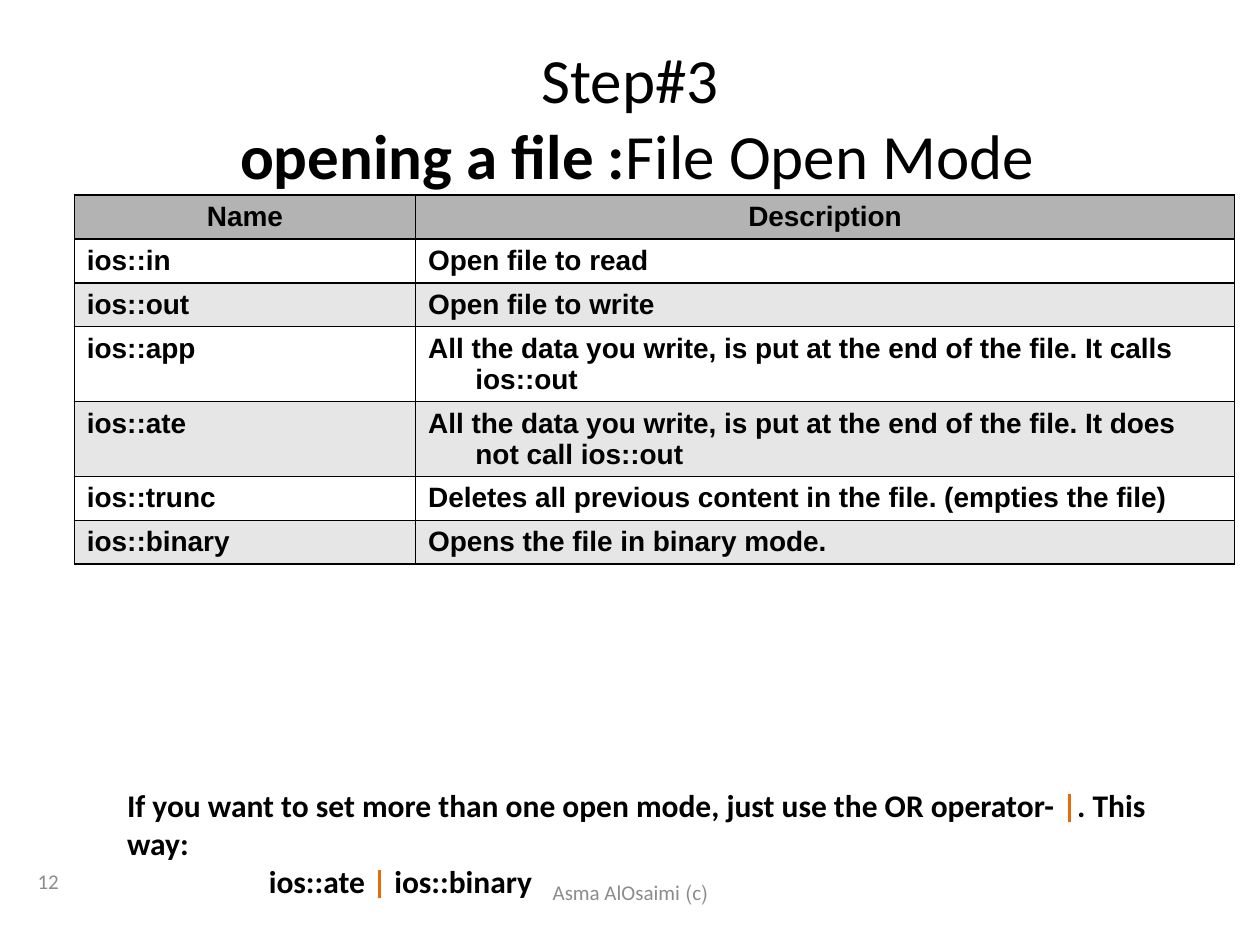
"""Builds the slide on C++ file open modes: a table of modes and a note on combining them."""
from lxml.etree import SubElement
from pptx import Presentation
from pptx.dml.color import RGBColor
from pptx.enum.text import MSO_ANCHOR as Anchor, PP_ALIGN as Align
from pptx.oxml.ns import qn
from pptx.util import Pt

BLACK = RGBColor(0x00, 0x00, 0x00)
ORANGE = RGBColor(0xE4, 0x6C, 0x0A)
MUTED = RGBColor(0x8C, 0x8C, 0x8C)
HEADER_GRAY = RGBColor(0xB3, 0xB3, 0xB3)
BAND_GRAY = RGBColor(0xE6, 0xE6, 0xE6)


def add_run(paragraph, text, size, color=BLACK, bold=False, face="Calibri"):
    run = paragraph.add_run()
    run.text = text
    run.font.name = face
    run.font.size = Pt(size)
    run.font.bold = bold
    run.font.color.rgb = color


def add_text_frame(slide, left, top, width, height, anchor):
    frame = slide.shapes.add_textbox(Pt(left), Pt(top), Pt(width), Pt(height)).text_frame
    frame.word_wrap = True
    frame.vertical_anchor = anchor
    return frame


prs = Presentation()
prs.slide_width, prs.slide_height = Pt(720), Pt(540)
slide = prs.slides.add_slide(prs.slide_layouts[5])

title = slide.shapes.title
title.left, title.top, title.width, title.height = Pt(36), Pt(21.6), Pt(648), Pt(90)
title.text_frame.vertical_anchor = Anchor.MIDDLE
heading = title.text_frame.paragraphs[0]
heading.alignment = Align.CENTER
add_run(heading, "Step#3", 36)
heading.add_line_break()
add_run(heading, " ", 36)
add_run(heading, "opening a file :", 36, bold=True)
add_run(heading, "File Open Mode", 36)

ONE_LINE, TWO_LINES = 25.1, 42.6
modes = [
    ("Name", "Description", ONE_LINE),
    ("ios::in", "Open file to read", ONE_LINE),
    ("ios::out", "Open file to write", ONE_LINE),
    ("ios::app", "All the data you write, is put at the end of the file. It calls ios::out", TWO_LINES),
    ("ios::ate", "All the data you write, is put at the end of the file. It does not call ios::out", TWO_LINES),
    ("ios::trunc", "Deletes all previous content in the file. (empties the file)", ONE_LINE),
    ("ios::binary", "Opens the file in binary mode.", ONE_LINE),
]
table_height = sum(height for _, _, height in modes)
mode_table = slide.shapes.add_table(
    len(modes), 2, Pt(42.5), Pt(111.4), Pt(663), Pt(table_height)).table
mode_table.columns[0].width, mode_table.columns[1].width = Pt(195), Pt(468)
mode_table.first_row = mode_table.horz_banding = False

for row, (name, description, height) in enumerate(modes):
    mode_table.rows[row].height = Pt(height)
    for column, text in enumerate((name, description)):
        cell = mode_table.cell(row, column)
        cell.margin_left = cell.margin_right = Pt(7.2)
        cell.margin_top = cell.margin_bottom = Pt(3.6)
        entry = cell.text_frame.paragraphs[0]
        entry.alignment = Align.CENTER if row == 0 else Align.LEFT
        hanging = entry._p.get_or_add_pPr()
        hanging.set("marL", str(Pt(27)))
        hanging.set("indent", str(Pt(-27)))
        add_run(entry, text, 16, bold=True, face="Arial")

        for side in ("a:lnL", "a:lnR", "a:lnT", "a:lnB"):
            border = SubElement(cell._tc.get_or_add_tcPr(), qn(side), w=str(Pt(1)))
            SubElement(SubElement(border, qn("a:solidFill")), qn("a:srgbClr"), val=str(BLACK))
        if row % 2:
            cell.fill.background()
        else:
            cell.fill.solid()
            cell.fill.fore_color.rgb = BAND_GRAY if row else HEADER_GRAY

note = add_text_frame(slide, 65.5, 445.7, 601.2, 72.7, Anchor.TOP)
advice = note.paragraphs[0]
add_run(advice, "If you want to set more than one open mode, just use the OR operator- ", 18, bold=True)
add_run(advice, "|", 18, ORANGE, bold=True)
add_run(advice, ". This way:", 18, bold=True)
example = note.add_paragraph()
example._p.get_or_add_pPr().set("marL", str(Pt(81)))
add_run(example, "ios::ate", 18, bold=True)
add_run(example, " | ", 18, ORANGE, bold=True)
add_run(example, "ios::binary", 18, bold=True)

page_number = add_text_frame(slide, 14.4, 485.3, 167.8, 36, Anchor.MIDDLE)
add_run(page_number.paragraphs[0], "12", 12, MUTED)

credit = add_text_frame(slide, 246.2, 491.8, 228.2, 36, Anchor.MIDDLE).paragraphs[0]
credit.alignment = Align.CENTER
credit._p.get_or_add_pPr().set("rtl", "1")
add_run(credit, "(c) Asma AlOsaimi", 12, MUTED)

prs.save("out.pptx")
